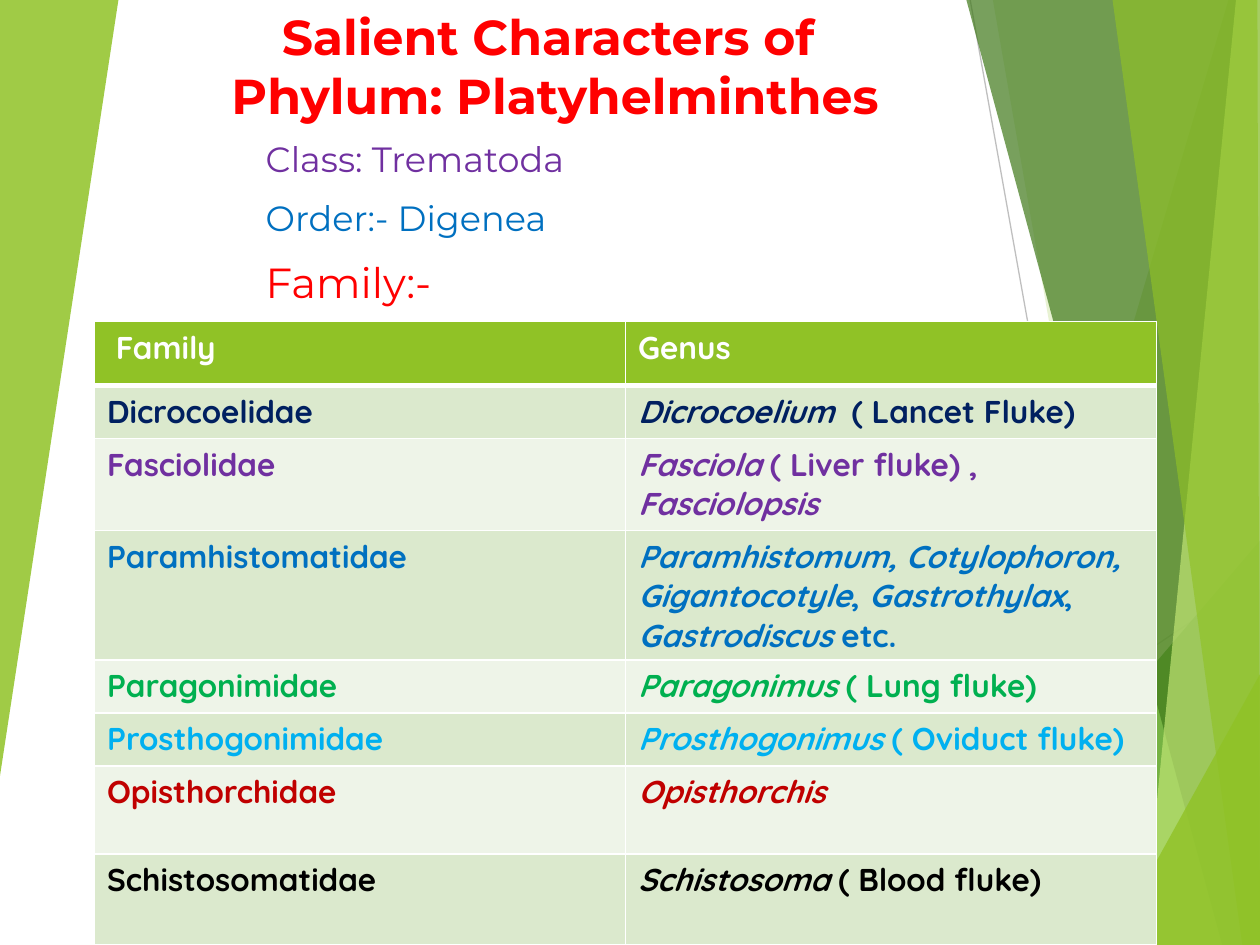
import lxml.etree
import pptx
import pptx.dml.color
import pptx.enum.shapes
import pptx.enum.text
import pptx.oxml
import pptx.oxml.ns
import pptx.util

Inches = pptx.util.Inches
qn = pptx.oxml.ns.qn

SLIDE_WIDTH, SLIDE_HEIGHT = 10, 7.5
HEADING_FONT, TABLE_FONT = "Montserrat", "Quicksand"
GREEN = "90C226"
BAND_FILLS = ["DBE9CD", "EEF4E8"]

# Points, fill colour and opacity in percent, from back to front
FACETS = [
    ([(9.75, 0), (7.54, 7.5), (10, 7.5), (10, 0)], GREEN, 30),
    ([(7.88, 0), (9.19, 7.5), (10, 7.5), (10, 0)], GREEN, 20),
    ([(7.26, 7.5), (10, 4.29), (10, 7.5)], "54A021", 72),
    ([(7.67, 0), (9.7, 7.5), (10, 7.5), (10, 0)], "3F7819", 70),
    ([(9.81, 0), (9.07, 7.5), (10, 7.5), (10, 0)], "C0E474", 70),
    ([(8.83, 0), (9.86, 7.5), (10, 7.5), (9.98, 0)], GREEN, 65),
    ([(8.81, 7.5), (10, 5.35), (10, 7.5)], GREEN, 80),
    ([(0, 0), (0.94, 0), (0, 6.16)], GREEN, 85),
]
FACET_LINES = [
    ((5.61, 7.5), (10, 4.57), "D9D9D9"),
    ((7.7, 0), (9.04, 7.5), "BFBFBF"),
]

CLASSIFICATION = [
    ("Class: Trematoda", 20, "7030A0"),
    ("Order:- Digenea", 20, "0070C0"),
    ("Family:-", 24, "FF0000"),
]

# Family, genus runs as (text, italic), text colour, row height
FAMILIES = [
    ("Dicrocoelidae", [("Dicrocoelium", True), ("  ( Lancet Fluke)", False)], "002060", 0.42),
    ("Fasciolidae", [("Fasciola ", True), ("( Liver fluke) , ", False), ("Fasciolopsis", True)],
     "7030A0", 0.73),
    ("Paramhistomatidae",
     [("Paramhistomum, Cotylophoron, Gigantocotyle", True), (", ", False),
      ("Gastrothylax", True), (", ", False), ("Gastrodiscus", True), (" etc.", False)],
     "0070C0", 1.03),
    ("Paragonimidae", [("Paragonimus", True), (" ( Lung fluke)", False)], "00B050", 0.42),
    ("Prosthogonimidae", [("Prosthogonimus", True), (" ( Oviduct fluke)", False)], "00B0F0", 0.42),
    ("Opisthorchidae", [("Opisthorchis", True)], "C00000", 0.7),
    ("Schistosomatidae", [("Schistosoma ", True), ("( Blood fluke)", False)], "000000", 0.72),
]
HEADER_HEIGHT = 0.51


def rgb(color):
    return pptx.dml.color.RGBColor.from_string(color)


def add_run(paragraph, text, *, font, size, color, bold=False, italic=False):
    run = paragraph.add_run()
    run.text = text
    run.font.name = font
    run.font.size = pptx.util.Pt(size)
    run.font.color.rgb = rgb(color)
    run.font.bold = bold
    run.font.italic = italic


def add_text_frame(slide, left, top, width, height):
    box = slide.shapes.add_textbox(Inches(left), Inches(top), Inches(width), Inches(height))
    box.text_frame.word_wrap = True
    return box.text_frame


def next_paragraph(text_frame, index):
    """Return the paragraph a new frame already has, then added ones."""
    return text_frame.add_paragraph() if index else text_frame.paragraphs[0]


def add_facet(slide, points, color, opacity):
    corners = [(Inches(x), Inches(y)) for x, y in points]
    builder = slide.shapes.build_freeform(*corners[0])
    builder.add_line_segments(corners[1:], close=True)
    shape = builder.convert_to_shape()
    shape.shadow.inherit = False
    shape.line.fill.background()
    shape.fill.solid()
    shape.fill.fore_color.rgb = rgb(color)
    color_element = shape.fill._xPr.find(qn("a:solidFill"))[0]
    lxml.etree.SubElement(color_element, qn("a:alpha"), val=str(opacity * 1000))


def add_background(slide):
    for start, end, color in FACET_LINES:
        line = slide.shapes.add_connector(
            pptx.enum.shapes.MSO_CONNECTOR.STRAIGHT,
            *(Inches(value) for value in start + end))
        line.line.color.rgb = rgb(color)
        line.line.width = pptx.util.Pt(0.75)
        lxml.etree.SubElement(line._element.spPr, qn("a:effectLst"))
    for points, color, opacity in FACETS:
        add_facet(slide, points, color, opacity)


def add_title(slide, left, top, width, height):
    text_frame = add_text_frame(slide, left, top, width, height)
    text_frame.vertical_anchor = pptx.enum.text.MSO_ANCHOR.MIDDLE
    for index, text in enumerate(["Salient Characters of ", "Phylum: Platyhelminthes"]):
        paragraph = next_paragraph(text_frame, index)
        paragraph.alignment = pptx.enum.text.PP_ALIGN.CENTER
        add_run(paragraph, text, font=HEADING_FONT, size=28, color="FF0000", bold=True)


def add_classification(slide, left, top, width, height):
    text_frame = add_text_frame(slide, left, top, width, height)
    for index, (text, size, color) in enumerate(CLASSIFICATION):
        paragraph = next_paragraph(text_frame, index)
        paragraph.space_before = pptx.util.Pt(10)
        add_run(paragraph, text, font=HEADING_FONT, size=size, color=color)


def set_borders(cell, bottom_width):
    """Draw white cell borders; they must precede the fill in the XML."""
    properties = cell._tc.get_or_add_tcPr()
    widths = {"a:lnL": 1, "a:lnR": 1, "a:lnT": 1, "a:lnB": bottom_width}
    for index, (tag, width) in enumerate(widths.items()):
        border = lxml.etree.Element(qn(tag), w=str(pptx.util.Pt(width)))
        fill = lxml.etree.SubElement(border, qn("a:solidFill"))
        lxml.etree.SubElement(fill, qn("a:srgbClr"), val="FFFFFF")
        properties.insert(index, border)


def fill_cell(cell, runs, text_color, fill_color, bottom_width=1):
    cell.fill.solid()
    cell.fill.fore_color.rgb = rgb(fill_color)
    set_borders(cell, bottom_width)
    for text, italic in runs:
        add_run(cell.text_frame.paragraphs[0], text, font=TABLE_FONT, size=18,
                color=text_color, bold=True, italic=italic)


def add_family_table(slide, left, top, width):
    heights = [HEADER_HEIGHT] + [family[-1] for family in FAMILIES]
    table = slide.shapes.add_table(
        len(heights), 2, Inches(left), Inches(top), Inches(width), Inches(sum(heights))).table
    for row, height in zip(table.rows, heights):
        row.height = Inches(height)
    for column, heading in enumerate([" Family", "Genus"]):
        fill_cell(table.cell(0, column), [(heading, False)], "FFFFFF", GREEN, bottom_width=3)
    for index, (family, genera, color, _) in enumerate(FAMILIES):
        for column, runs in enumerate([[(family, False)], genera]):
            fill_cell(table.cell(index + 1, column), runs, color, BAND_FILLS[index % 2])
    for column in range(2):
        set_top = table.cell(1, column)._tc.tcPr.find(qn("a:lnT"))
        set_top.set("w", str(pptx.util.Pt(3)))


def main():
    presentation = pptx.Presentation()
    presentation.slide_width = Inches(SLIDE_WIDTH)
    presentation.slide_height = Inches(SLIDE_HEIGHT)
    slide = presentation.slides.add_slide(presentation.slide_layouts[6])
    add_background(slide)
    add_classification(slide, 2.01, 1.04, 6.85, 1.5)
    add_title(slide, 0.98, 0, 6.85, 1.04)
    add_family_table(slide, 0.75, 2.55, 8.43)
    presentation.save("out.pptx")


if __name__ == "__main__":
    main()
